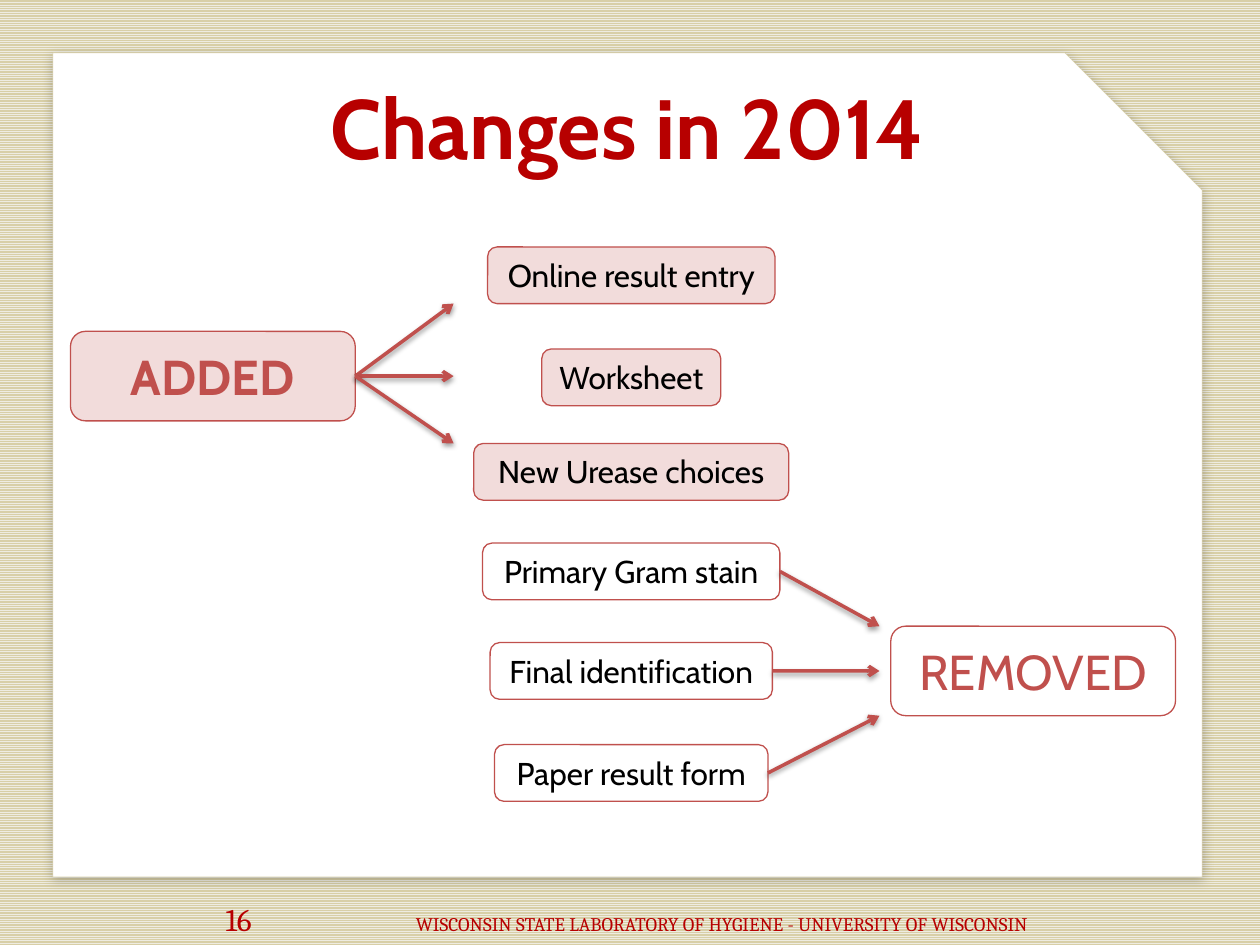
import pptx
import pptx.dml.color
import pptx.enum.dml
import pptx.enum.shapes
import pptx.enum.text
import pptx.oxml
import pptx.oxml.ns
import pptx.util
from lxml import etree

SLIDE_W, SLIDE_H = pptx.util.Inches(10), pptx.util.Inches(7.5)
ANCHOR = pptx.enum.text.MSO_ANCHOR
ALIGN = pptx.enum.text.PP_ALIGN
RIGHT_SIDE = 3

DARK_RED, ROSE, PINK = "B70000", "C0504D", "F2DCDB"
SAND, CREAM, WHITE, BLACK = "D8CFA7", "EEECE1", "FFFFFF", "000000"

# Positions are percentages of the slide's width and height
PAGE_LEFT, PAGE_TOP, PAGE_W, PAGE_H = 4.2, 5.6, 91.2, 87.2
ITEM_CENTRE, ITEM_H = 50.1, 6
LABEL_W, LABEL_H = 22.6, 9.47
ADDED_ITEMS = [("Online result entry", 26.13, 22.8),
               ("Worksheet", 36.93, 14.2),
               ("New Urease choices", 46.93, 25)]
REMOVED_ITEMS = [("Primary Gram stain", 57.47, 23.6),
                 ("Final identification", 68, 22.4),
                 ("Paper result form", 78.8, 21.7)]

LABEL_FRAME = {"margin_left": 0, "margin_right": 0, "margin_top": 0,
               "margin_bottom": 0, "word_wrap": True,
               "vertical_anchor": ANCHOR.MIDDLE}
TITLE_FRAME = {**LABEL_FRAME, "vertical_anchor": ANCHOR.TOP}
ITEM_FRAME = {"word_wrap": False, "vertical_anchor": ANCHOR.TOP,
              "auto_size": pptx.enum.text.MSO_AUTO_SIZE.SHAPE_TO_FIT_TEXT}


def x(share):
    return round(SLIDE_W * share / 100)


def y(share):
    return round(SLIDE_H * share / 100)


def box(left, top, width, height):
    return x(left), y(top), x(width), y(height)


def rgb(value):
    return pptx.dml.color.RGBColor.from_string(value)


def apply(target, values):
    for name, value in values.items():
        setattr(target, name, value)


def paint(shape, fill, line, width):
    if fill:
        shape.fill.solid()
        shape.fill.fore_color.rgb = rgb(fill)
    else:
        shape.fill.background()
    shape.line.color.rgb = rgb(line)
    shape.line.width = pptx.util.Pt(width)


def add_shadow(shape, opacity, blur, distance, angle):
    points = pptx.util.Pt
    shape.element.spPr.append(pptx.oxml.parse_xml(
        f'<a:effectLst {pptx.oxml.ns.nsdecls("a")}>'
        f'<a:outerShdw blurRad="{points(blur)}" dist="{points(distance)}" '
        f'dir="{angle * 60000}" algn="ctr" rotWithShape="0">'
        f'<a:srgbClr val="{BLACK}"><a:alpha val="{opacity * 1000}"/></a:srgbClr>'
        '</a:outerShdw></a:effectLst>'))


def add_run(paragraph, text, size, font, color, bold=False):
    run = paragraph.add_run()
    run.text = text
    apply(run.font, {"size": pptx.util.Pt(size), "name": font, "bold": bold})
    run.font.color.rgb = rgb(color)


def write(shape, text, frame, size, color, bold=False):
    apply(shape.text_frame, frame)
    paragraph = shape.text_frame.paragraphs[0]
    paragraph.alignment = ALIGN.CENTER
    add_run(paragraph, text, size, "Cabin", color, bold)


def add_page(slide):
    right, bottom = PAGE_LEFT + PAGE_W, PAGE_TOP + PAGE_H
    outline = slide.shapes.build_freeform(x(PAGE_LEFT), y(PAGE_TOP))
    corners = [(84.5, PAGE_TOP), (right, 20.13), (right, bottom),
               (PAGE_LEFT, bottom)]
    outline.add_line_segments([(x(h), y(v)) for h, v in corners], close=True)
    page = outline.convert_to_shape()
    paint(page, WHITE, SAND, 0.25)
    add_shadow(page, opacity=22, blur=6, distance=2, angle=80)


def add_card(slide, place, fill):
    card = slide.shapes.add_shape(
        pptx.enum.shapes.MSO_SHAPE.ROUNDED_RECTANGLE, *box(*place))
    card.shadow.inherit = False
    paint(card, fill, ROSE, 0.75)
    return card


def add_label(slide, text, left, top, fill, bold):
    label = add_card(slide, (left, top, LABEL_W, LABEL_H), fill)
    write(label, text, LABEL_FRAME, 28, ROSE, bold)
    return label


def add_item(slide, text, top, width, fill):
    item = add_card(slide, (ITEM_CENTRE - width / 2, top, width, ITEM_H), fill)
    write(item, text, ITEM_FRAME, 18, BLACK)
    return item


def add_arrow(slide, source, end_x, end_y):
    """Arrow from the middle of the source's right side."""
    arrow = slide.shapes.add_connector(
        pptx.enum.shapes.MSO_CONNECTOR.STRAIGHT,
        source.left + source.width, source.top + source.height // 2,
        end_x, end_y)
    arrow.begin_connect(source, RIGHT_SIDE)
    arrow.line.color.rgb = rgb(ROSE)
    arrow.line.width = pptx.util.Pt(2)
    qn = pptx.oxml.ns.qn
    etree.SubElement(arrow.element.spPr.find(qn("a:ln")), qn("a:tailEnd"),
                     type="arrow")
    add_shadow(arrow, opacity=38, blur=3.1, distance=1.6, angle=90)


def add_footer(slide):
    footer = slide.shapes.add_textbox(*box(PAGE_LEFT, 94.53, PAGE_W, 5.33))
    apply(footer.text_frame, {"word_wrap": True, "margin_left": x(13.7),
                              "vertical_anchor": ANCHOR.MIDDLE})
    paragraph = footer.text_frame.paragraphs[0]
    paragraph.alignment = ALIGN.LEFT
    paragraph.line_spacing = 1.0
    properties = paragraph._p.get_or_add_pPr()
    properties.append(pptx.oxml.parse_xml(
        f'<a:tabLst {pptx.oxml.ns.nsdecls("a")}>'
        f'<a:tab pos="{x(15.1)}" algn="l"/></a:tabLst>'))
    add_run(paragraph, "16", 18, "Cambria", DARK_RED)
    add_run(paragraph, "\tWISCONSIN STATE LABORATORY OF HYGIENE"
            " - UNIVERSITY OF WISCONSIN", 11, "Cambria", DARK_RED)


def main():
    deck = pptx.Presentation()
    apply(deck, {"slide_width": SLIDE_W, "slide_height": SLIDE_H})
    slide = deck.slides.add_slide(deck.slide_layouts[6])

    # Striped background and white page
    stripes = slide.background.fill
    stripes.patterned()
    stripes.pattern = pptx.enum.dml.MSO_PATTERN.NARROW_HORIZONTAL
    stripes.fore_color.rgb = rgb(CREAM)
    stripes.back_color.rgb = rgb(SAND)
    add_page(slide)

    # Title
    title = slide.shapes.add_textbox(*box(PAGE_LEFT, 8, PAGE_W, 18.27))
    write(title, "Changes in 2014", TITLE_FRAME, 48, DARK_RED, bold=True)

    # Added: the label fans out to its items
    added = add_label(slide, "ADDED", 5.6, 35.07, PINK, bold=True)
    first, _, last = [add_item(slide, *item, PINK) for item in ADDED_ITEMS]
    for end_y in (first.top + first.height,
                  added.top + added.height // 2, last.top):
        add_arrow(slide, added, x(36), end_y)

    # Removed: the items lead to the label
    removed = add_label(slide, "REMOVED", 70.7, 66.27, None, bold=False)
    for step, entry in enumerate(REMOVED_ITEMS):
        item = add_item(slide, *entry, None)
        add_arrow(slide, item, x(69.8), removed.top + removed.height * step // 2)

    add_footer(slide)
    deck.save("out.pptx")


if __name__ == "__main__":
    main()
